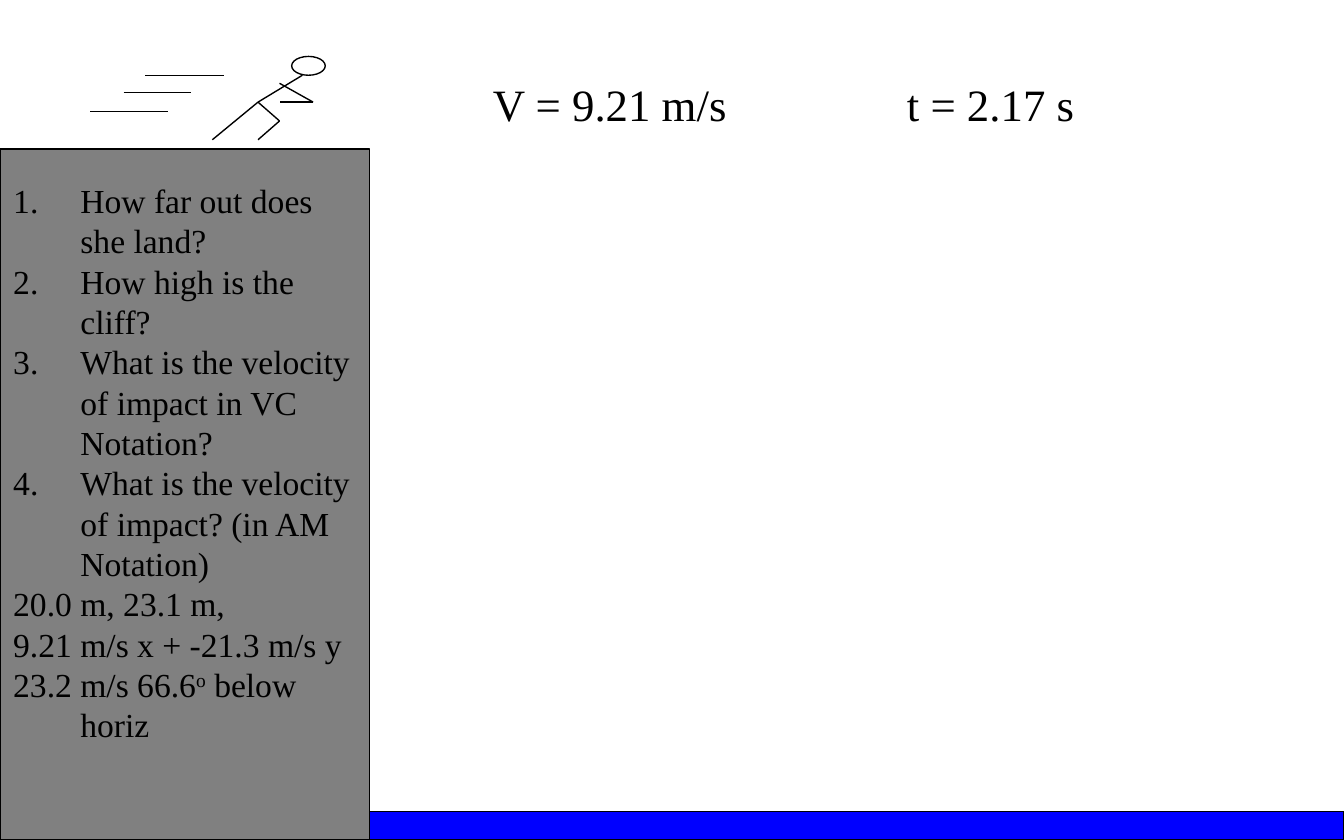
"""Build a slide with a cliff-jump projectile problem and its four questions."""
from dataclasses import dataclass
from itertools import pairwise

from lxml.etree import SubElement
from pptx import Presentation
from pptx.dml.color import RGBColor as RGB
from pptx.enum.shapes import MSO_CONNECTOR as Link, MSO_SHAPE as Kind
from pptx.enum.text import MSO_AUTO_SIZE as Fit
from pptx.oxml.ns import qn
from pptx.util import Inches, Pt


@dataclass(frozen=True)
class Theme:
    font: str = "Times New Roman"
    ink: RGB = RGB(0, 0, 0)
    rock: RGB = RGB(0x80, 0x80, 0x80)
    water: RGB = RGB(0, 0, 0xFF)
    big: Pt = Pt(24)
    body: Pt = Pt(18)
    line: Pt = Pt(0.75)


theme = Theme()
deck = Presentation()
deck.slide_width, deck.slide_height = Inches(10), Inches(6.25)
slide = deck.slides.add_slide(deck.slide_layouts[6])
shapes = slide.shapes


def add_text(rows, *, box, size, wrap=False, hang=0, count=0):
    frame = shapes.add_textbox(*map(Inches, box)).text_frame
    frame.word_wrap = wrap
    frame.auto_size = Fit.SHAPE_TO_FIT_TEXT
    for i, row in enumerate(rows):
        para = frame.paragraphs[0] if i == 0 else frame.add_paragraph()
        props = para._p.get_or_add_pPr()
        if hang:
            props.set("marL", str(Inches(hang)))
            props.set("indent", str(-Inches(hang)))
        if i < count:
            SubElement(props, qn("a:buFontTx"))
            SubElement(props, qn("a:buAutoNum"), type="arabicPeriod")
        for j, part in enumerate(row.split("^")):
            run = para.add_run()
            run.text = part
            run.font.name, run.font.size = theme.font, size
            run.font.color.rgb = theme.ink
            if j % 2:
                run.font._element.set("baseline", "30000")


def add_shape(kind, box, fill=None):
    shape = shapes.add_shape(kind, *map(Inches, box))
    shape.shadow.inherit = False
    if fill is None:
        shape.fill.background()
    else:
        shape.fill.solid()
        shape.fill.fore_color.rgb = fill
    shape.line.color.rgb = theme.ink
    shape.line.width = theme.line


add_shape(Kind.RECTANGLE, (0, 1.11, 2.75, 5.14), theme.rock)
add_shape(Kind.OVAL, (2.17, 0.42, 0.25, 0.14))

hip = (1.92, 0.76)
strokes = [
    [(1.58, 1.04), hip, (2.08, 0.9), (1.92, 1.04)],
    [hip, (2.25, 0.56)],
    [(2.08, 0.62), (2.33, 0.76), (2.08, 0.76)],
    [(1.08, 0.56), (1.67, 0.56)],
    [(0.92, 0.69), (1.42, 0.69)],
    [(0.67, 0.83), (1.25, 0.83)],
]
for stroke in strokes:
    for start, end in pairwise(stroke):
        limb = shapes.add_connector(Link.STRAIGHT, *map(Inches, start + end))
        limb.line.color.rgb = theme.ink
        limb.line.width = theme.line
        SubElement(limb._element.spPr, qn("a:effectLst"))

add_text(["V = 9.21 m/s"], box=(3.57, 0.52, 1.96, 0.5), size=theme.big)
add_text(["t = 2.17 s"], box=(6.65, 0.52, 1.46, 0.5), size=theme.big)

tasks = [
    "How far out does she land?",
    "How high is the cliff?",
    "What is the velocity of impact in VC Notation?",
    "What is the velocity of impact? (in AM Notation)",
]
answers = [
    "20.0 m, 23.1 m,",
    "9.21 m/s x + -21.3 m/s y",
    "23.2 m/s 66.6^o^ below horiz",
]
add_text(tasks + answers, box=(0, 1.29, 2.75, 6.06), size=theme.body,
         wrap=True, hang=0.5, count=len(tasks))

add_shape(Kind.RECTANGLE, (2.75, 6.04, 7.25, 0.21), theme.water)
deck.save("out.pptx")
